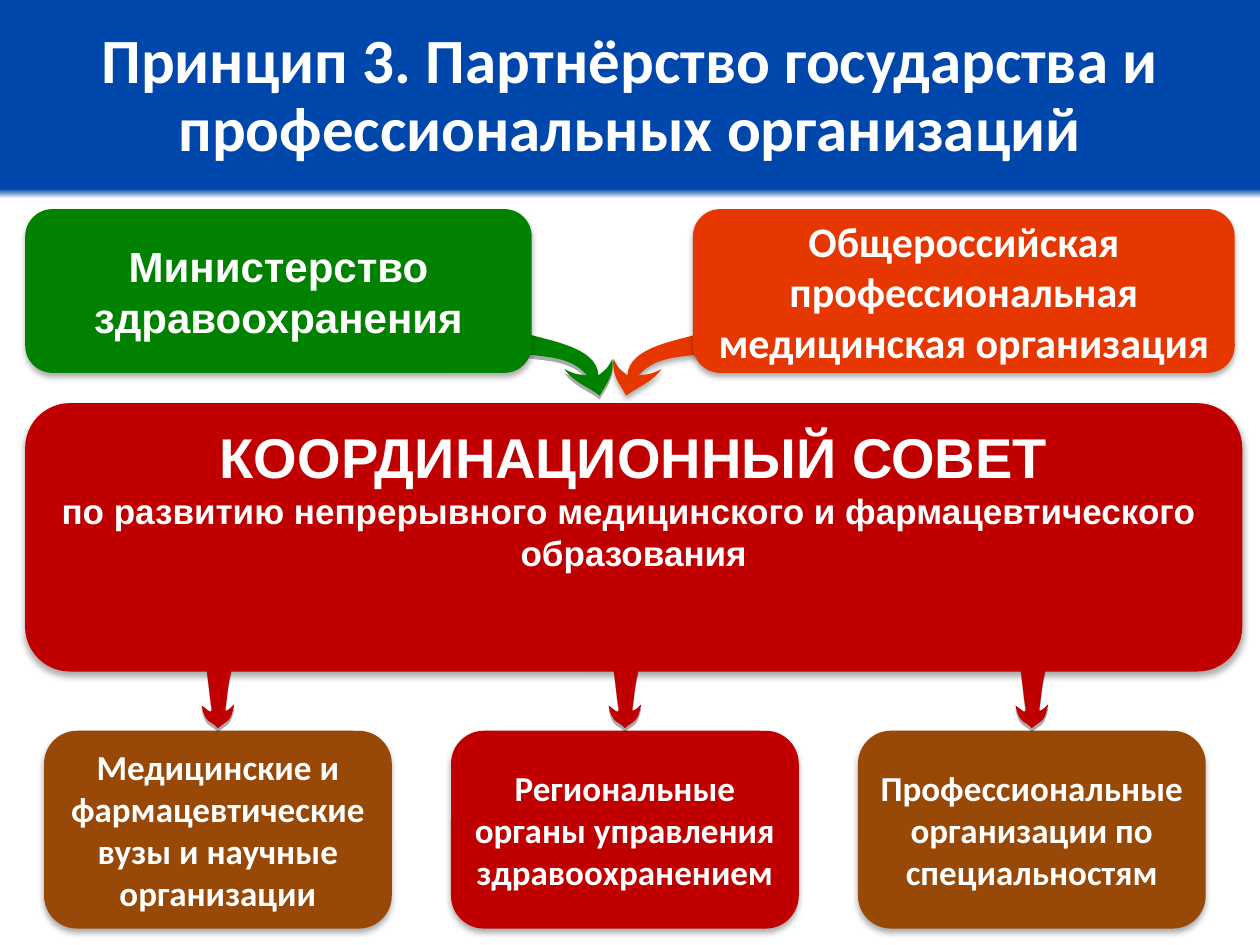
from lxml.etree import SubElement
from pptx import Presentation
from pptx.dml.color import RGBColor
from pptx.enum.shapes import MSO_SHAPE as SHAPE
from pptx.enum.text import MSO_ANCHOR as ANCHOR, PP_ALIGN as ALIGN
from pptx.oxml.ns import qn
from pptx.util import Inches, Pt

WHITE = RGBColor(0xFF, 0xFF, 0xFF)
BLUE = RGBColor(0x00, 0x47, 0xAB)
GREEN = RGBColor(0x00, 0x82, 0x00)
ORANGE = RGBColor(0xE6, 0x37, 0x00)
RED = RGBColor(0xC0, 0x00, 0x00)
BROWN = RGBColor(0x98, 0x48, 0x07)
BLACK = RGBColor(0x00, 0x00, 0x00)

CARD_LEFT, CARD_STEP, CARD_WIDTH = 0.35, 3.23, 2.76
MIRROR_SUM = 9.73

MERGE_START = (5.61, 2.63)
MERGE_CURVES = [
    ((5.42, 2.7), (4.99, 2.74), (4.98, 2.98)),
    ((4.94, 2.94), (4.92, 2.95), (4.87, 2.85)),
    ((4.85, 2.97), (4.92, 3.05), (4.97, 3.14)),
    ((5.06, 3.07), (5.17, 3.04), (5.25, 2.93)),
    ((5.15, 2.98), (5.13, 2.97), (5.07, 2.98)),
    ((5.21, 2.81), (5.45, 2.84), (5.61, 2.8)),
]
DOWN_START = (1.64, 5.31)
DOWN_CURVES = [
    ((1.65, 5.37), (1.67, 5.57), (1.68, 5.62)),
    ((1.68, 5.67), (1.67, 5.65), (1.6, 5.6)),
    ((1.63, 5.75), (1.68, 5.72), (1.73, 5.78)),
    ((1.81, 5.71), (1.83, 5.74), (1.86, 5.59)),
    ((1.81, 5.64), (1.78, 5.66), (1.79, 5.62)),
    ((1.8, 5.57), (1.81, 5.41), (1.84, 5.31)),
]


def set_background(slide):
    fill = slide.background.fill
    fill.gradient()
    fill.gradient_angle = 270
    stops = next(slide.element.iter(qn("a:gsLst")))
    for stop in list(stops):
        stops.remove(stop)
    for percent, color in ((0, BLUE), (20, BLUE), (21, WHITE), (100, WHITE)):
        stop = SubElement(stops, qn("a:gs"), pos=str(percent * 1000))
        SubElement(stop, qn("a:srgbClr"), val=str(color))


def add_shadow(sp, blur):
    sp.shadow.inherit = False
    effects = sp.element.spPr.find(qn("a:effectLst"))
    shadow = SubElement(effects, qn("a:outerShdw"), blurRad=str(Pt(blur)),
                        dist=str(Pt(2.2)), dir="5400000", rotWithShape="0")
    color = SubElement(shadow, qn("a:srgbClr"), val=str(BLACK))
    SubElement(color, qn("a:alpha"), val="32000")


def paint(sp, color, blur):
    sp.fill.solid()
    sp.fill.fore_color.rgb = color
    sp.line.fill.background()
    add_shadow(sp, blur)


def add_run(p, text, size, font):
    r = p.add_run()
    r.text = text
    r.font.size = Pt(size)
    r.font.name = font
    r.font.bold = True
    r.font.color.rgb = WHITE


def add_title(slide, text):
    tf = slide.shapes.add_textbox(0, 0, Inches(10), Inches(1.54)).text_frame
    tf.word_wrap = True
    tf.vertical_anchor = ANCHOR.MIDDLE
    p = tf.paragraphs[0]
    p.alignment = ALIGN.CENTER
    p.line_spacing = 0.9
    add_run(p, text, 36, "Calibri")


def add_box(slide, box, color, paragraphs, font, anchor=ANCHOR.MIDDLE):
    sp = slide.shapes.add_shape(SHAPE.ROUNDED_RECTANGLE, *map(Inches, box))
    paint(sp, color, 3.5)
    tf = sp.text_frame
    tf.word_wrap = True
    tf.vertical_anchor = anchor
    tf.margin_left = tf.margin_right = Inches(0.09)
    for i, (size, *lines) in enumerate(paragraphs):
        p = tf.add_paragraph() if i else tf.paragraphs[0]
        p.alignment = ALIGN.CENTER
        for j, line in enumerate(lines):
            if j:
                p.add_line_break()
            add_run(p, line, size, font)


def add_arrow(slide, start, curves, color, blur=0, shift=0, flip=1):
    def place(point):
        return Inches(shift + flip * point[0]), Inches(point[1])

    builder = slide.shapes.build_freeform(*place(start), scale=1.0)
    builder.add_line_segments([place(curve[-1]) for curve in curves], close=True)
    sp = builder.convert_to_shape()
    segments = list(sp.element.iter(qn("a:lnTo")))
    for segment, curve in zip(segments, curves):
        bezier = segment.makeelement(qn("a:cubicBezTo"))
        for x, y in map(place, curve):
            SubElement(bezier, qn("a:pt"), x=str(x - sp.left), y=str(y - sp.top))
        segment.getparent().replace(segment, bezier)
    paint(sp, color, blur)


def main():
    prs = Presentation()
    prs.slide_width, prs.slide_height = Inches(10), Inches(7.5)
    slide = prs.slides.add_slide(prs.slide_layouts[6])
    set_background(slide)
    add_title(slide, "Принцип 3. Партнёрство государства и профессиональных организаций")

    add_arrow(slide, MERGE_START, MERGE_CURVES, ORANGE, blur=3.5)
    add_arrow(slide, MERGE_START, MERGE_CURVES, GREEN, shift=MIRROR_SUM, flip=-1)
    add_box(slide, (0.2, 1.66, 4.02, 1.3), GREEN,
            [(24, "Министерство здравоохранения")], "Arial")
    add_box(slide, (5.5, 1.66, 4.3, 1.3), ORANGE,
            [(24, "Общероссийская профессиональная медицинская организация")], "Calibri")
    add_box(slide, (0.2, 3.2, 9.66, 2.13), RED,
            [(32, "КООРДИНАЦИОННЫЙ СОВЕТ"),
             (20, "по развитию непрерывного медицинского и фармацевтического ",
              "образования")], "Arial", ANCHOR.TOP)

    cards = [
        ("Медицинские и фармацевтические вузы и научные организации", BROWN),
        ("Региональные органы управления здравоохранением", RED),
        ("Профессиональные организации по специальностям", BROWN),
    ]
    for i, (text, color) in enumerate(cards):
        shift = i * CARD_STEP
        add_box(slide, (CARD_LEFT + shift, 5.8, CARD_WIDTH, 1.57), color,
                [(20, text)], "Calibri")
        add_arrow(slide, DOWN_START, DOWN_CURVES, RED, shift=shift)

    prs.save("out.pptx")


if __name__ == "__main__":
    main()
